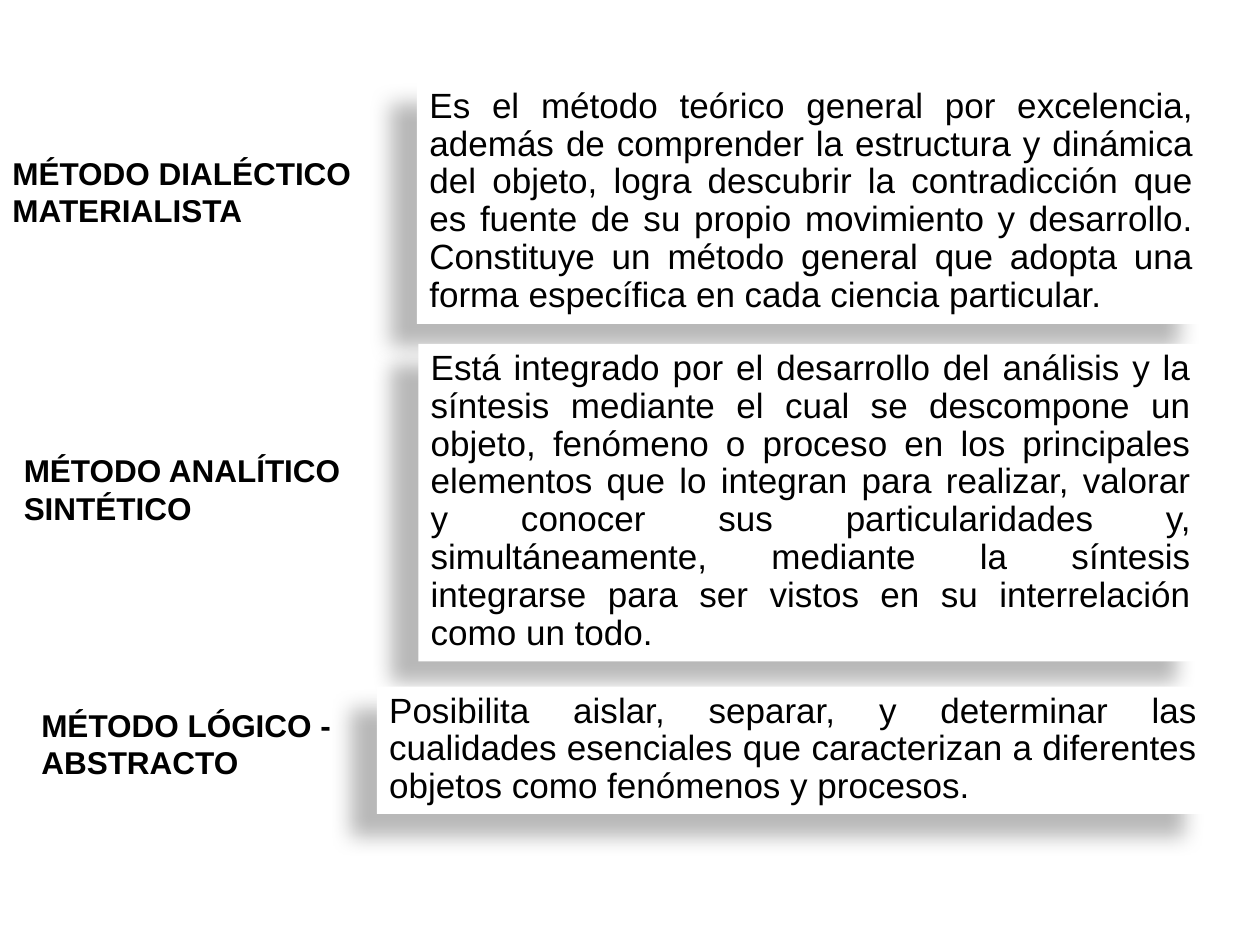
"""Builds a slide that pairs three research methods with their definitions."""
import dataclasses

import lxml.etree
import pptx
import pptx.dml.color
import pptx.enum.shapes
import pptx.enum.text
import pptx.oxml.ns
import pptx.util

ALIGN = pptx.enum.text.PP_ALIGN


@dataclasses.dataclass(frozen=True)
class Theme:
    font: str = "Arial"
    ink: str = "000000"
    paper: str = "FFFFFF"
    label_size: int = 18
    body_size: int = 20
    body_spacing: float = 0.9
    shadow_alpha: int = 28
    shadow_blur: float = 11.8
    shadow_distance: float = 19.7
    shadow_angle: int = 141


METHODS = [
    ("MÉTODO DIALÉCTICO MATERIALISTA", (0, 11.7, 29.9, 7),
     "Es el método teórico general por excelencia, además de comprender la "
     "estructura y dinámica del objeto, logra descubrir la contradicción que es "
     "fuente de su propio movimiento y desarrollo. Constituye un método general "
     "que adopta una forma específica en cada ciencia particular.",
     (33.1, 6.5, 62.6, 19.2)),
    ("MÉTODO ANALÍTICO SINTÉTICO", (0.9, 35.3, 30.9, 7),
     "Está integrado por el desarrollo del análisis y la síntesis mediante el "
     "cual se descompone un objeto, fenómeno o proceso en los principales "
     "elementos que lo integran para realizar, valorar y conocer sus "
     "particularidades y, simultáneamente, mediante la síntesis integrarse para "
     "ser vistos en su interrelación como un todo.",
     (33.2, 27.3, 62.3, 25.2)),
    ("MÉTODO LÓGICO - ABSTRACTO", (2.3, 55.5, 25.4, 7.1),
     "Posibilita aislar, separar, y determinar las cualidades esenciales que "
     "caracterizan a diferentes objetos como fenómenos y procesos.",
     (29.9, 54.5, 66.1, 10.1)),
]


def write(frame, text, *, font, size, color, bold=False, align=ALIGN.LEFT, spacing=1.0):
    frame.word_wrap = True
    frame.vertical_anchor = pptx.enum.text.MSO_ANCHOR.TOP
    para = frame.paragraphs[0]
    para.alignment = align
    para.line_spacing = spacing
    span = para.add_run()
    span.text = text
    span.font.name = font
    span.font.size = pptx.util.Pt(size)
    span.font.bold = bold
    span.font.color.rgb = pptx.dml.color.RGBColor.from_string(color)


class Painter:
    columns, rows = 100, 75

    def __init__(self, deck, theme):
        self.theme = theme
        self.cell_width = deck.slide_width / self.columns
        self.cell_height = deck.slide_height / self.rows
        self.page = deck.slides.add_slide(deck.slide_layouts[6])

    def place(self, area):
        left, top, width, height = area
        return (round(left * self.cell_width), round(top * self.cell_height),
                round(width * self.cell_width), round(height * self.cell_height))

    def label(self, text, area):
        box = self.page.shapes.add_textbox(*self.place(area))
        write(box.text_frame, text, font=self.theme.font, size=self.theme.label_size,
              color=self.theme.ink, bold=True)

    def card(self, text, area):
        box = self.page.shapes.add_shape(
            pptx.enum.shapes.MSO_SHAPE.RECTANGLE, *self.place(area))
        box.fill.solid()
        box.fill.fore_color.rgb = pptx.dml.color.RGBColor.from_string(self.theme.paper)
        box.line.fill.background()
        self.cast_shadow(box)
        write(box.text_frame, text, font=self.theme.font, size=self.theme.body_size,
              color=self.theme.ink, align=ALIGN.JUSTIFY, spacing=self.theme.body_spacing)

    def cast_shadow(self, box):
        theme, qn = self.theme, pptx.oxml.ns.qn
        box.shadow.inherit = False
        effects = box.element.spPr.find(qn("a:effectLst"))
        shadow = lxml.etree.SubElement(
            effects, qn("a:outerShdw"),
            blurRad=str(pptx.util.Pt(theme.shadow_blur)),
            dist=str(pptx.util.Pt(theme.shadow_distance)),
            dir=str(theme.shadow_angle * 60000), algn="ctr", rotWithShape="0")
        color = lxml.etree.SubElement(shadow, qn("a:srgbClr"), val=theme.ink)
        lxml.etree.SubElement(color, qn("a:alpha"), val=str(theme.shadow_alpha * 1000))


def main():
    deck = pptx.Presentation()
    deck.slide_width = pptx.util.Inches(10)
    deck.slide_height = pptx.util.Inches(7.5)
    painter = Painter(deck, Theme())
    for name, name_area, definition, definition_area in METHODS:
        painter.label(name, name_area)
        painter.card(definition, definition_area)
    deck.save("out.pptx")


if __name__ == "__main__":
    main()
